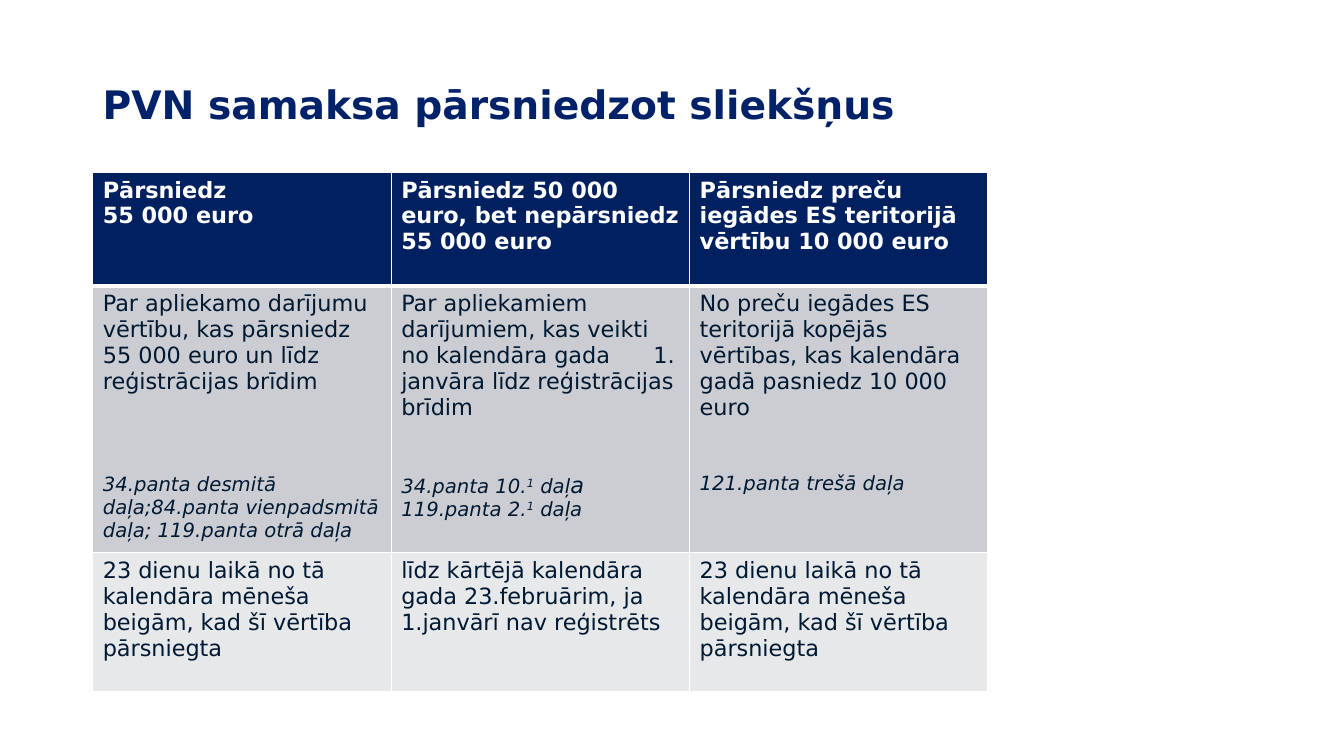
from dataclasses import dataclass

from lxml.etree import SubElement
from pptx import Presentation
from pptx.dml.color import RGBColor
from pptx.enum.text import MSO_ANCHOR
from pptx.oxml.ns import qn
from pptx.util import Inches, Pt


@dataclass(frozen=True)
class Theme:
    font: str = "DejaVu Sans"
    title_color: str = "012269"
    header_fill: str = "002060"
    rule_fill: str = "CCCDD2"
    deadline_fill: str = "E7E8EA"
    white: str = "FFFFFF"
    ink: str = "001933"
    title_size: int = 28
    body_size: int = 16
    note_size: int = 14
    thin_border: int = 1
    thick_border: int = 3


@dataclass(frozen=True)
class Piece:
    text: str
    size: int
    bold: bool = False
    italic: bool = False
    superscript: bool = False


@dataclass(frozen=True)
class Line:
    pieces: tuple[Piece, ...]
    space_before: float = 0
    tab_stop: float = 0


@dataclass(frozen=True)
class Row:
    height: float
    fill: str
    color: str
    top_border: int
    bottom_border: int
    cells: tuple[tuple[Line, ...], ...]


THEME = Theme()
COLUMN_WIDTH = 2.96


def heading(text: str) -> Line:
    return Line((Piece(text, THEME.body_size, bold=True),))


def body(text: str, tab_stop: float = 0) -> Line:
    return Line((Piece(text, THEME.body_size),), tab_stop=tab_stop)


def note(*pieces: Piece, space_before: float = 0) -> Line:
    return Line(pieces, space_before)


def reference(text: str, superscript: bool = False, size: int = THEME.note_size) -> Piece:
    return Piece(text, size, italic=True, superscript=superscript)


MONTH_DEADLINE = body("23 dienu laikā no tā kalendāra mēneša beigām, kad šī vērtība pārsniegta")

ROWS = (
    Row(1.13, THEME.header_fill, THEME.white, THEME.thin_border, THEME.thick_border, (
        (heading("Pārsniedz"), heading("55 000 euro")),
        (heading("Pārsniedz 50 000 euro, bet nepārsniedz 55 000 euro"),),
        (heading("Pārsniedz preču iegādes ES teritorijā vērtību 10 000 euro"),),
    )),
    Row(2.58, THEME.rule_fill, THEME.ink, THEME.thick_border, THEME.thin_border, (
        (
            body("Par apliekamo darījumu vērtību, kas pārsniedz 55 000 euro un līdz reģistrācijas brīdim"),
            note(
                reference("34.panta desmitā daļa;84.panta vienpadsmitā daļa; 119.panta otrā daļa"),
                space_before=56,
            ),
        ),
        (
            body(
                "Par apliekamiem darījumiem, kas veikti no kalendāra gada\t1. janvāra līdz reģistrācijas brīdim",
                tab_stop=2.5,
            ),
            note(
                reference("34.panta 10."),
                reference("1", superscript=True),
                reference(" daļ"),
                reference("a", size=THEME.body_size),
                space_before=37,
            ),
            note(reference("119.panta 2."), reference("1", superscript=True), reference(" daļa")),
        ),
        (
            body("No preču iegādes ES teritorijā kopējās vērtības, kas kalendāra gadā pasniedz 10 000 euro"),
            note(reference("121.panta trešā daļa"), space_before=37),
        ),
    )),
    Row(1.38, THEME.deadline_fill, THEME.ink, THEME.thin_border, THEME.thin_border, (
        (MONTH_DEADLINE,),
        (body("līdz kārtējā kalendāra gada 23.februārim, ja 1.janvārī nav reģistrēts"),),
        (MONTH_DEADLINE,),
    )),
)


def write_line(paragraph, line: Line, color: str) -> None:
    if line.space_before:
        paragraph.space_before = Pt(line.space_before)
    if line.tab_stop:
        tabs = SubElement(paragraph._p.get_or_add_pPr(), qn("a:tabLst"))
        SubElement(tabs, qn("a:tab"), pos=str(Inches(line.tab_stop)), algn="l")
    for piece in line.pieces:
        run = paragraph.add_run()
        run.text = piece.text
        run.font.name = THEME.font
        run.font.size = Pt(piece.size)
        run.font.bold = piece.bold
        run.font.italic = piece.italic
        run.font.color.rgb = RGBColor.from_string(color)
        if piece.superscript:
            run._r.get_or_add_rPr().set("baseline", "30000")


def write_lines(text_frame, lines: tuple[Line, ...], color: str) -> None:
    for index, line in enumerate(lines):
        paragraph = text_frame.add_paragraph() if index else text_frame.paragraphs[0]
        write_line(paragraph, line, color)


def set_borders(cell, row: Row) -> None:
    widths = {
        "a:lnL": THEME.thin_border,
        "a:lnR": THEME.thin_border,
        "a:lnT": row.top_border,
        "a:lnB": row.bottom_border,
    }
    properties = cell._tc.get_or_add_tcPr()
    for tag, width in widths.items():
        border = SubElement(properties, qn(tag), w=str(Pt(width)))
        fill = SubElement(border, qn("a:solidFill"))
        SubElement(fill, qn("a:srgbClr"), val=THEME.white)


def add_title(slide) -> None:
    shape = slide.shapes.add_textbox(Inches(0.92), Inches(0.56), Inches(10.58), Inches(0.99))
    text_frame = shape.text_frame
    text_frame.word_wrap = True
    text_frame.vertical_anchor = MSO_ANCHOR.MIDDLE
    title = Line((Piece("PVN samaksa pārsniedzot sliekšņus", THEME.title_size, bold=True),))
    write_lines(text_frame, (title,), THEME.title_color)
    text_frame.paragraphs[0].line_spacing = 0.9


def add_threshold_table(slide) -> None:
    column_count = len(ROWS[0].cells)
    table = slide.shapes.add_table(
        len(ROWS), column_count, Inches(0.92), Inches(1.71),
        Inches(COLUMN_WIDTH * column_count), Inches(sum(row.height for row in ROWS)),
    ).table
    table.horz_banding = False
    for column in table.columns:
        column.width = Inches(COLUMN_WIDTH)
    for row_index, row in enumerate(ROWS):
        table.rows[row_index].height = Inches(row.height)
        for column_index, lines in enumerate(row.cells):
            cell = table.cell(row_index, column_index)
            set_borders(cell, row)
            cell.fill.solid()
            cell.fill.fore_color.rgb = RGBColor.from_string(row.fill)
            write_lines(cell.text_frame, lines, row.color)


def main() -> None:
    presentation = Presentation()
    presentation.slide_width = Inches(13.33)
    presentation.slide_height = Inches(7.5)
    slide = presentation.slides.add_slide(presentation.slide_layouts[6])
    add_title(slide)
    add_threshold_table(slide)
    presentation.save("out.pptx")


if __name__ == "__main__":
    main()
